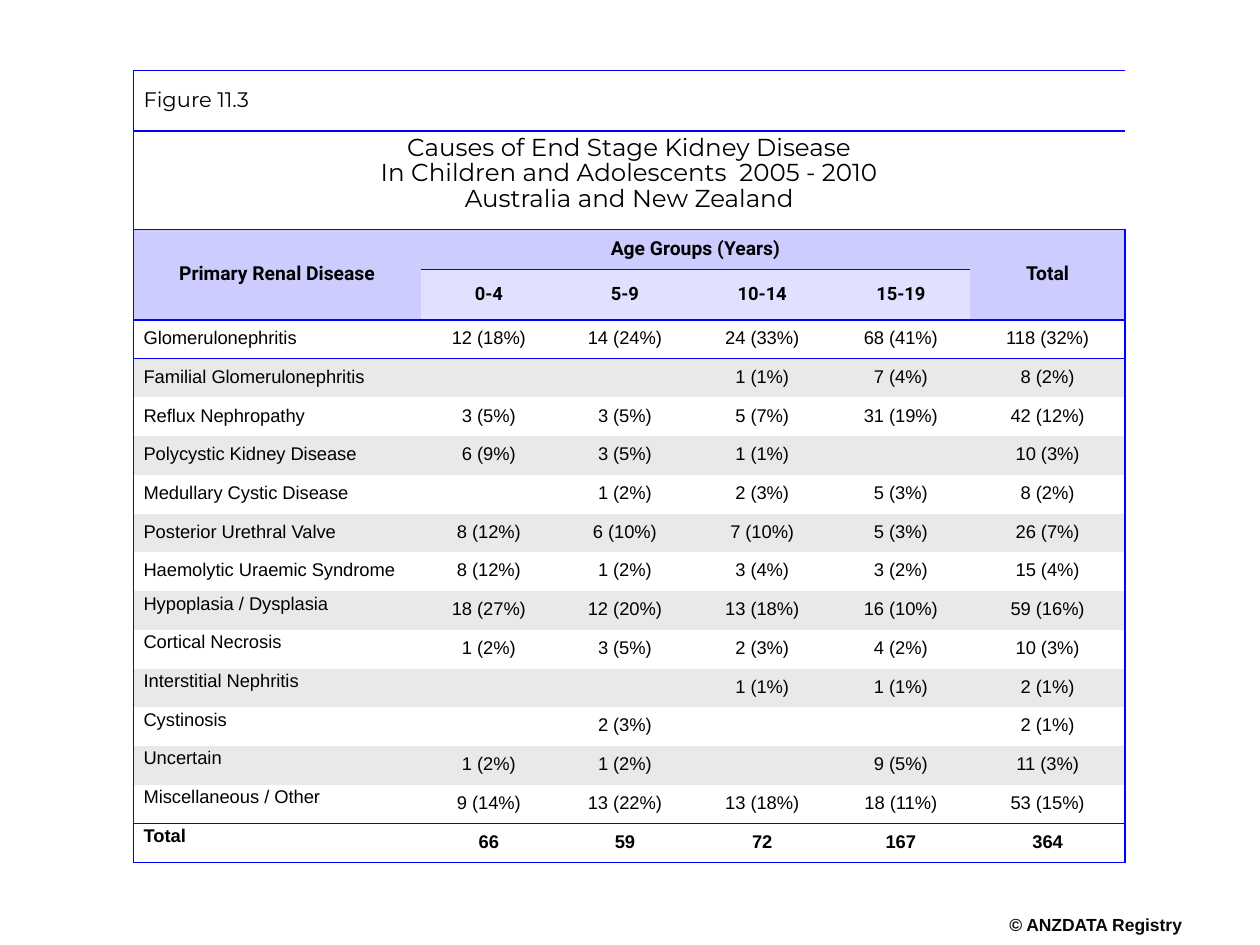
from lxml import etree
from pptx import Presentation
from pptx import util as u
from pptx.dml import color as dml
from pptx.enum import text as t
from pptx.oxml import ns

Inches = u.Inches
COLOURS = {"ink": "000000", "credit": "080808", "line": "0000FF",
           "header": "CCCCFF", "ages": "E1E1FF", "band": "E9E9E9"}
NO_GRID_STYLE = "{2D5ABB26-0587-4C30-8999-92F81FD0307C}"


def write(frame, content, size=10.5, font="Arial", bold=False, colour="ink",
          align=t.PP_ALIGN.CENTER):
    for i, line in enumerate(content.split("\n")):
        para = frame.paragraphs[0] if i == 0 else frame.add_paragraph()
        para.alignment = align
        para.line_spacing = 0.85
        if not line:
            # An empty cell keeps the text size, so its row does not grow
            para._p.get_or_add_endParaRPr().set("sz", str(int(size * 100)))
            continue
        run = para.add_run()
        run.text = line
        run.font.size = u.Pt(size)
        run.font.name = font
        run.font.bold = bold
        run.font.color.rgb = dml.RGBColor.from_string(COLOURS[colour])


def draw_borders(cell, sides):
    props = cell._tc.get_or_add_tcPr()
    for side in (s for s in "LRTB" if s in sides):
        edge = etree.SubElement(props, ns.qn("a:ln" + side), w=str(u.Pt(1)))
        fill = etree.SubElement(edge, ns.qn("a:solidFill"))
        etree.SubElement(fill, ns.qn("a:srgbClr"), val=COLOURS["line"])


figure_title = ("Causes of End Stage Kidney Disease\n"
                "In Children and Adolescents  2005 - 2010\n"
                "Australia and New Zealand")
age_groups = ["0-4", "5-9", "10-14", "15-19"]
diseases = [
    ["Glomerulonephritis", "12 (18%)", "14 (24%)", "24 (33%)", "68 (41%)", "118 (32%)"],
    ["Familial Glomerulonephritis", "", "", "1 (1%)", "7 (4%)", "8 (2%)"],
    ["Reflux Nephropathy", "3 (5%)", "3 (5%)", "5 (7%)", "31 (19%)", "42 (12%)"],
    ["Polycystic Kidney Disease", "6 (9%)", "3 (5%)", "1 (1%)", "", "10 (3%)"],
    ["Medullary Cystic Disease", "", "1 (2%)", "2 (3%)", "5 (3%)", "8 (2%)"],
    ["Posterior Urethral Valve", "8 (12%)", "6 (10%)", "7 (10%)", "5 (3%)", "26 (7%)"],
    ["Haemolytic Uraemic Syndrome", "8 (12%)", "1 (2%)", "3 (4%)", "3 (2%)", "15 (4%)"],
    ["Hypoplasia / Dysplasia", "18 (27%)", "12 (20%)", "13 (18%)", "16 (10%)", "59 (16%)"],
    ["Cortical Necrosis", "1 (2%)", "3 (5%)", "2 (3%)", "4 (2%)", "10 (3%)"],
    ["Interstitial Nephritis", "", "", "1 (1%)", "1 (1%)", "2 (1%)"],
    ["Cystinosis", "", "2 (3%)", "", "", "2 (1%)"],
    ["Uncertain", "1 (2%)", "1 (2%)", "", "9 (5%)", "11 (3%)"],
    ["Miscellaneous / Other", "9 (14%)", "13 (22%)", "13 (18%)", "18 (11%)", "53 (15%)"],
    ["Total", "66", "59", "72", "167", "364"],
]
rows = [
    ["Figure 11.3"] + [""] * 5,
    [figure_title] + [""] * 5,
    ["Primary Renal Disease", "Age Groups (Years)", "", "", "", "Total"],
    ["", *age_groups, ""],
    *diseases,
]
FIRST_DISEASE = 4
FIRST_TOP_LABEL = 11  # labels from Hypoplasia on sit at the top of their cell
last_row, last_col = len(rows) - 1, len(rows[0]) - 1

prs = Presentation()
prs.slide_width, prs.slide_height = Inches(10), Inches(7.5)
slide = prs.slides.add_slide(prs.slide_layouts[6])

# Credit line
credit = slide.shapes.add_textbox(Inches(7.99), Inches(7.28), Inches(1.41), Inches(0.17)).text_frame
credit.margin_left = credit.margin_right = credit.margin_top = credit.margin_bottom = 0
credit.word_wrap = False
write(credit, "© ANZDATA Registry", size=10, bold=True, colour="credit")

# Table grid
table_height = 6.29
column_widths = [2.28, 1.08, 1.08, 1.1, 1.1, 1.23]
head_heights = [0.48, 0.78, 0.32, 0.4]
disease_height = (table_height - sum(head_heights)) / len(diseases)
causes = slide.shapes.add_table(len(rows), len(column_widths), Inches(1.06), Inches(0.56),
                                Inches(sum(column_widths)), Inches(table_height)).table
causes.first_row = causes.horz_banding = False
causes._tbl.tblPr.find(ns.qn("a:tableStyleId")).text = NO_GRID_STYLE
for column, width in zip(causes.columns, column_widths):
    column.width = Inches(width)
for row, height in zip(causes.rows, head_heights + [disease_height] * len(diseases)):
    row.height = Inches(height)

# Merged heading cells: first row, first column, last row, last column
for top, left, bottom, right in [(0, 0, 0, 5), (1, 0, 1, 5), (2, 0, 3, 0),
                                 (2, 1, 2, 4), (2, 5, 3, 5)]:
    causes.cell(top, left).merge(causes.cell(bottom, right))

# Cells
for r, row in enumerate(rows):
    for c, content in enumerate(row):
        cell = causes.cell(r, c)
        is_age = 1 <= c <= 4
        is_label = c == 0 and r >= FIRST_DISEASE

        # Borders: the outer frame and the lines between sections
        sides = "L" * (c == 0) + "R" * (c == last_col)
        if r in (0, 1, 2, FIRST_DISEASE, last_row) or (r == 3 and is_age):
            sides += "T"
        if r in (0, 1, 3, last_row - 1, last_row) or (r == 2 and is_age):
            sides += "B"
        draw_borders(cell, sides)

        # Fill
        if r in (2, 3):
            fill = "ages" if r == 3 and is_age else "header"
        else:
            fill = "band" if FIRST_DISEASE < r < last_row and r % 2 else None
        if fill:
            cell.fill.solid()
            cell.fill.fore_color.rgb = dml.RGBColor.from_string(COLOURS[fill])
        else:
            cell.fill.background()

        # Text
        cell.margin_right = cell.margin_top = cell.margin_bottom = Inches(0.04)
        cell.margin_left = Inches(0.08 if is_label or r == 0 else 0.04)
        at_top = r == 1 or (is_label and r >= FIRST_TOP_LABEL)
        cell.vertical_anchor = t.MSO_ANCHOR.TOP if at_top else t.MSO_ANCHOR.MIDDLE
        if cell.is_spanned:
            continue
        size = {0: 12, 1: 14, 2: 11}.get(r, 10.5)
        font = "Montserrat" if r < 2 else "Roboto" if r < FIRST_DISEASE else "Arial"
        align = t.PP_ALIGN.LEFT if is_label or r == 0 else t.PP_ALIGN.CENTER
        write(cell.text_frame, content, size=size, font=font,
              bold=r in (2, 3, last_row), align=align)

prs.save("out.pptx")
